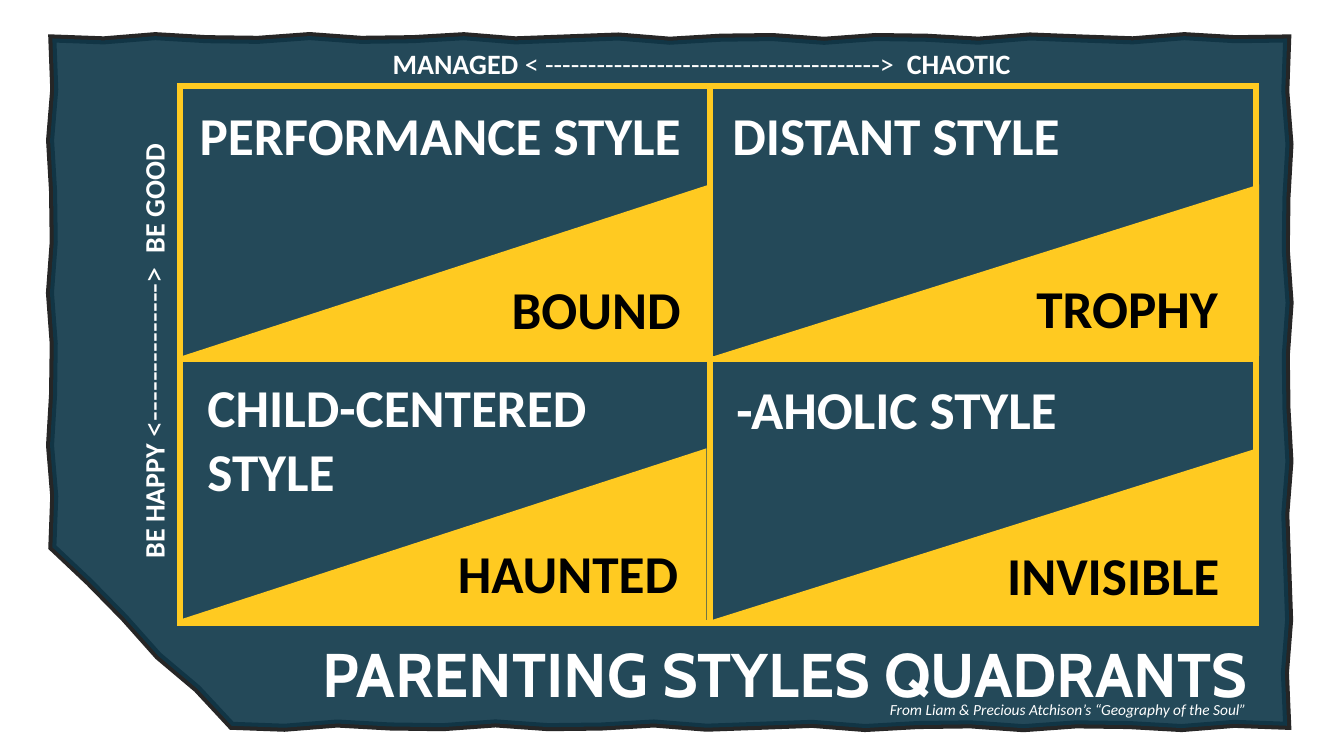
from copy import deepcopy
from math import hypot, sin

from lxml.etree import SubElement
from pptx import Presentation
from pptx.dml.color import RGBColor
from pptx.enum.shapes import MSO_SHAPE
from pptx.enum.text import MSO_ANCHOR, PP_ALIGN
from pptx.oxml.ns import qn
from pptx.util import Cm, Pt

COLORS = {"panel": "0F3749", "outline": "262626", "gold": "FFCA21",
          "white": "FFFFFF", "black": "000000"}

HEADING = {"name": "Calibri", "size": Pt(38), "bold": True}
AXIS = {"name": "Calibri", "size": Pt(20), "bold": True}
AXIS_PLAIN = {**AXIS, "bold": False}
AXIS_ARROW = {**AXIS_PLAIN, "size": Pt(23)}
TITLE = {"name": "Cabin", "size": Pt(44), "bold": True}
SOURCE = {"name": "Calibri", "size": Pt(11), "bold": False, "italic": True}

PANEL_CORNERS = [(1.32, 0.97), (32.44, 0.97), (32.44, 18.29), (5.84, 18.29), (1.32, 13.79)]

# Frame edges in cm: outer left, top, right, bottom and the two dividers
LEFT, TOP, RIGHT, BOTTOM = 4.54, 2.16, 31.65, 15.7
MIDDLE_X, MIDDLE_Y = 17.89, 9.04

# Per quadrant: heading and its box, triangle box, label and its box
QUADRANTS = [
    ("PERFORMANCE STYLE", (4.78, 2.46, 13.54, 1.88), (4.6, 4.65, 13.28, 4.32),
     "BOUND", (12.58, 6.83, 4.83, 1.88)),
    ("DISTANT STYLE", (18.21, 2.46, 11.53, 1.88), (18.01, 4.65, 13.72, 4.32),
     "TROPHY", (25.81, 6.81, 5.13, 1.88)),
    ("CHILD-CENTERED STYLE", (4.98, 9.3, 12.27, 3.5), (4.52, 11.3, 13.28, 4.32),
     "HAUNTED", (11.23, 13.49, 6.12, 1.88)),
    ("-AHOLIC STYLE", (18.31, 9.35, 9.32, 1.88), (17.86, 11.33, 13.72, 4.32),
     "INVISIBLE", (25.07, 13.54, 5.92, 1.88)),
]


def rgb(name):
    return RGBColor.from_string(COLORS[name])


def lengths(box):
    return [Cm(value) for value in box]


def write(shape, spans, align, color="white", spacing=None):
    """Fill the first paragraph with (text, format) spans."""
    para = shape.text_frame.paragraphs[0]
    para.alignment = align
    para.line_spacing = spacing
    for text, values in spans:
        span = para.add_run()
        span.text = text
        for key, value in values.items():
            setattr(span.font, key, value)
        span.font.color.rgb = rgb(color)


def add_text(page, box, spans, align=PP_ALIGN.LEFT, color="white", spacing=None, wrap=True):
    shape = page.shapes.add_textbox(*lengths(box))
    shape.text_frame.word_wrap = wrap
    write(shape, spans, align, color, spacing)
    return shape


def set_line(shape, color, width):
    shape.line.color.rgb = rgb(color)
    shape.line.width = Pt(width)
    SubElement(shape.line._get_or_add_ln(), qn("a:miter")).set("lim", "800000")


def add_frame(page, left, top, right, bottom):
    frame = page.shapes.add_shape(
        MSO_SHAPE.RECTANGLE, *lengths((left, top, right - left, bottom - top)))
    frame.shadow.inherit = False
    frame.fill.background()
    set_line(frame, "gold", 4.5)


def add_triangle(page, box):
    triangle = page.shapes.add_shape(MSO_SHAPE.ISOSCELES_TRIANGLE, *lengths(box))
    triangle.adjustments[0] = 1.0
    triangle.shadow.inherit = False
    triangle.fill.solid()
    triangle.fill.fore_color.rgb = rgb("gold")
    triangle.line.fill.background()


def rough_points(corners, step=1.3, swing=0.06):
    """Walk round the corners, swaying a little to each side of the edge."""
    points = []
    for (x1, y1), (x2, y2) in zip(corners, corners[1:] + corners[:1]):
        length = hypot(x2 - x1, y2 - y1)
        count = round(length / step)
        for index in range(count):
            along = index / count
            sway = swing * sin(2.2 * index)
            points.append((Cm(x1 + (x2 - x1) * along - (y2 - y1) / length * sway),
                           Cm(y1 + (y2 - y1) * along + (x2 - x1) / length * sway)))
    return points


def add_panel(page):
    start, *others = rough_points(PANEL_CORNERS)
    builder = page.shapes.build_freeform(*start)
    builder.add_line_segments(others, close=True)
    panel = builder.convert_to_shape()
    panel.shadow.inherit = False
    panel.fill.solid()
    panel.fill.fore_color.rgb = rgb("panel")
    fill_color = panel.fill._xPr.find(qn("a:solidFill")).find(qn("a:srgbClr"))
    SubElement(fill_color, qn("a:alpha")).set("val", "91000")
    set_line(panel, "outline", 5.75)
    # Stroke first, then lay the fill over the inner half of the stroke
    stroke = next(panel._element.iter(qn("a:path")))
    body = deepcopy(stroke)
    stroke.set("fill", "none")
    body.set("stroke", "0")
    stroke.addnext(body)


def place_title(page, box, text):
    title = page.shapes.title
    title.left, title.top, title.width, title.height = lengths(box)
    title.text_frame.word_wrap = True
    title.text_frame.vertical_anchor = MSO_ANCHOR.MIDDLE
    write(title, [(text, TITLE)], PP_ALIGN.RIGHT, spacing=0.9)
    # Bring the title in front of the panel
    page.shapes._spTree.append(title._element)


def main():
    deck = Presentation()
    deck.slide_width, deck.slide_height = Cm(33.87), Cm(19.05)
    page = deck.slides.add_slide(deck.slide_layouts[5])

    # Panel and quadrant frames
    add_panel(page)
    add_frame(page, LEFT, TOP, RIGHT, BOTTOM)
    add_frame(page, LEFT, TOP, MIDDLE_X, MIDDLE_Y)
    add_frame(page, MIDDLE_X, MIDDLE_Y, RIGHT, BOTTOM)

    # Quadrants
    for heading, heading_box, triangle_box, label, label_box in QUADRANTS:
        add_triangle(page, triangle_box)
        add_text(page, heading_box, [(heading, HEADING)])
        add_text(page, label_box, [(label, HEADING)], PP_ALIGN.RIGHT, "black", wrap=False)

    # Axes
    add_text(page, (4.7, 1.04, 25.96, 1.12),
             [("MANAGED", AXIS),
              (" < --------------------------------------->  ", AXIS_PLAIN),
              ("CHAOTIC", AXIS)], PP_ALIGN.CENTER)
    side_axis = add_text(page, (-3.76, 8.36, 15.47, 0.99),
                         [("BE HAPPY ", AXIS), ("<--------------> ", AXIS_ARROW),
                          (" ", AXIS_PLAIN), ("BE GOOD", AXIS)],
                         PP_ALIGN.CENTER, spacing=0.7)
    side_axis.rotation = 270

    # Title and source line
    place_title(page, (2.5, 15.24, 29.21, 3.68), "PARENTING STYLES QUADRANTS")
    add_text(page, (21.32, 17.53, 10.35, 0.74),
             [("From Liam & Precious Atchison’s “Geography of the Soul”", SOURCE)],
             PP_ALIGN.RIGHT)

    deck.save("out.pptx")


if __name__ == "__main__":
    main()
